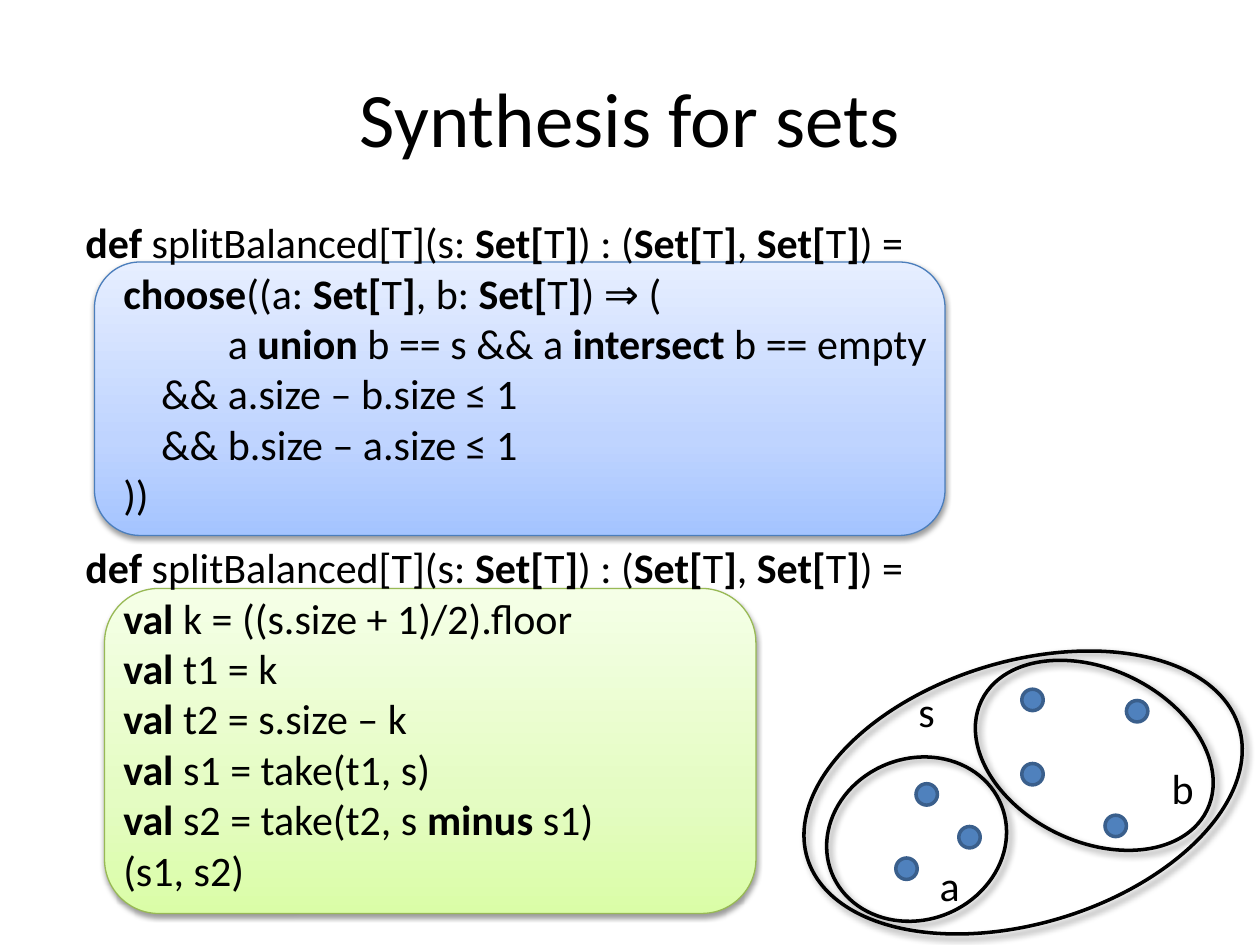
import pptx
import pptx.util
import pptx.dml.color
import pptx.enum.shapes
import pptx.enum.text
import pptx.oxml.ns
import lxml.etree

SCALE = 9144
FONT = "Calibri"
SHAPE = pptx.enum.shapes.MSO_SHAPE
FIT = pptx.enum.text.MSO_AUTO_SIZE
HEAD = (0, "*def *splitBalanced[T](s: *Set[*T*]*) : (*Set[*T*]*, *Set[*T*]*) =")
SPEC = [
    HEAD,
    (30, "*choose*((a: *Set[*T*]*, b: *Set[*T*]*) ⇒ ("),
    (113, "a *union* b == s && a *intersect* b == empty"),
    (60, "&& a.size – b.size ≤ 1"),
    (60, "&& b.size – a.size ≤ 1"),
    (30, "))"),
]
CODE = [
    HEAD,
    (30, "*val* k = ((s.size + 1)/2).floor"),
    (30, "*val* t1 = k"),
    (30, "*val* t2 = s.size – k"),
    (30, "*val* s1 = take(t1, s)"),
    (30, "*val* s2 = take(t2, s *minus* s1)"),
    (30, "(s1, s2)"),
]
BLUE = ("A4C4FF", "BFD4FF", "E6EEFF")
GREEN = ("DAFDA7", "E4FCC2", "F5FFE7")
RINGS = [
    ((655, 602, 145, 128), 338.3),
    ((769, 531, 199, 137), 25.9),
    ((633, 525, 358, 208), 343.1),
]
NAMES = [
    ("a", (736, 677, 40, 37)),
    ("b", (920, 600, 49, 39)),
    ("s", (719, 539, 67, 50)),
]
DOTS = [(811, 547), (894, 556), (811, 606), (761, 656),
        (727, 622), (711, 681), (877, 647)]


def px(num):
    """Turn px into EMU."""
    return pptx.util.Emu(num * SCALE)


def color(code):
    """Turn a hex string into a colour."""
    return pptx.dml.color.RGBColor.from_string(code)


def node(root, tag, **attrs):
    """Add a drawing element below root."""
    name = pptx.oxml.ns.qn("a:" + tag)
    return lxml.etree.SubElement(root, name, attrs)


def find(shape, tag):
    """Find a drawing element inside a shape."""
    return shape.element.find(".//" + pptx.oxml.ns.qn("a:" + tag))


def add_shape(shapes, kind, box, line, width):
    """Add an outlined shape without shadow."""
    shape = shapes.add_shape(kind, *map(px, box))
    shape.shadow.inherit = False
    shape.line.color.rgb = color(line)
    shape.line.width = pptx.util.Pt(width)
    return shape


def add_shadow(shape, blur, dist, angle, alpha):
    """Give a shape a soft black shadow."""
    shadow = node(find(shape, "effectLst"), "outerShdw",
                  blurRad=str(blur), dist=str(dist),
                  dir=str(angle * 60000), rotWithShape="0")
    shade = node(shadow, "srgbClr", val="000000")
    node(shade, "alpha", val=str(alpha * 1000))


def add_panel(shapes, box, tints, line):
    """Add a rounded panel with a gradient rising from its base."""
    panel = add_shape(shapes, SHAPE.ROUNDED_RECTANGLE, box, line, 0.75)
    panel.fill.gradient()
    panel.fill.gradient_angle = 90
    stops = find(panel, "gsLst")
    stops.clear()
    for pos, tint in zip((0, 35, 100), tints):
        stop = node(stops, "gs", pos=str(pos * 1000))
        node(stop, "srgbClr", val=tint)
    add_shadow(panel, 40000, 20000, 90, 38)


def add_ring(shapes, box, turn):
    """Add a turned, hollow ellipse."""
    ring = add_shape(shapes, SHAPE.OVAL, box, "000000", 2)
    ring.fill.background()
    ring.rotation = turn
    add_shadow(ring, 50800, 38100, 45, 40)


def add_dot(shapes, left, top):
    """Add one set member."""
    dot = add_shape(shapes, SHAPE.OVAL, (left, top, 17, 17), "3A5F8C", 2)
    dot.fill.solid()
    dot.fill.fore_color.rgb = color("4F81BD")


def style(run, size, bold=False):
    """Format one run."""
    run.font.name = FONT
    run.font.size = pptx.util.Pt(size)
    run.font.bold = bold
    run.font.color.rgb = color("000000")


def add_text(shapes, box, text="", size=24):
    """Add a wrapping text box and return its frame."""
    frame = shapes.add_textbox(*map(px, box)).text_frame
    frame.word_wrap = True
    frame.text = text
    for run in frame.paragraphs[0].runs:
        style(run, size)
    return frame


def add_title(shapes, box, text):
    """Add the centred title."""
    frame = add_text(shapes, box, text, 44)
    frame.vertical_anchor = pptx.enum.text.MSO_ANCHOR.MIDDLE
    frame.paragraphs[0].alignment = pptx.enum.text.PP_ALIGN.CENTER


def add_code(shapes, box, lines):
    """Add indented code lines, with bold parts between stars."""
    frame = add_text(shapes, box)
    frame.auto_size = FIT.SHAPE_TO_FIT_TEXT
    for num, (indent, text) in enumerate(lines):
        para = frame.add_paragraph() if num else frame.paragraphs[0]
        props = para._p.get_or_add_pPr()
        props.set("marL", str(px(indent)))
        props.set("indent", "0")
        for part, words in enumerate(text.split("*")):
            if words:
                run = para.add_run()
                run.text = words
                style(run, 24, part % 2 == 1)


def add_sets(shapes):
    """Add the grouped diagram of set s split into a and b."""
    group = shapes.add_group_shape().shapes
    for box, turn in RINGS:
        add_ring(group, box, turn)
    for name, box in NAMES:
        add_text(group, box, name).auto_size = FIT.SHAPE_TO_FIT_TEXT
    for left, top in DOTS:
        add_dot(group, left, top)


def main():
    """Build the slide and save it."""
    deck = pptx.Presentation()
    deck.slide_width, deck.slide_height = px(1000), px(750)
    shapes = deck.slides.add_slide(deck.slide_layouts[6]).shapes
    add_panel(shapes, (83, 467, 517, 258), GREEN, "98B955")
    add_panel(shapes, (75, 208, 675, 217), BLUE, "4B7EBC")
    add_title(shapes, (50, 30, 900, 125), "Synthesis for sets")
    add_code(shapes, (58, 167, 892, 252), SPEC)
    add_code(shapes, (58, 425, 708, 293), CODE)
    add_sets(shapes)
    deck.save("out.pptx")


if __name__ == "__main__":
    main()
